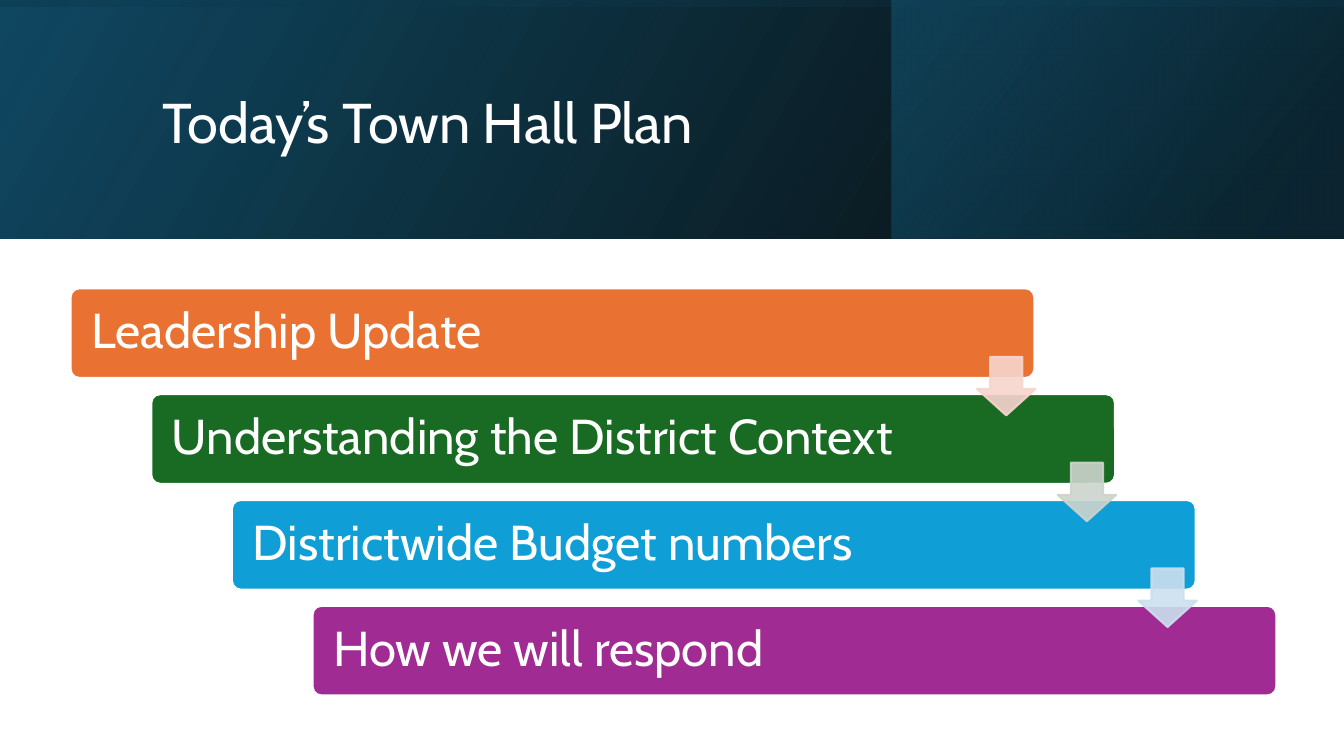
import pptx
import pptx.util
import pptx.dml.color
import pptx.enum.shapes
import pptx.enum.text
import lxml.etree

Inches = pptx.util.Inches
Pt = pptx.util.Pt
RGB = pptx.dml.color.RGBColor.from_string
KIND = pptx.enum.shapes.MSO_SHAPE
MIDDLE = pptx.enum.text.MSO_ANCHOR.MIDDLE
LEFT = pptx.enum.text.PP_ALIGN.LEFT
COLORS = {
    "white": "FFFFFF", "black": "000000", "navy": "104862",
    "deep": "0B3041", "teal": "156082",
    "orange": "E97132", "green": "196B24", "blue": "0F9ED5", "purple": "A02B93",
    "peach": "F7D5CE", "sage": "CCD4CD", "sky": "CCDFEF",
}


def fade(shape, levels):
    for color, level in zip(shape.element.xpath("./p:spPr//a:srgbClr"), levels):
        alpha = lxml.etree.SubElement(color, pptx.oxml.ns.qn("a:alpha"))
        alpha.set("val", str(level * 1000))


def write(frame, text, size):
    frame.word_wrap = True
    frame.vertical_anchor = MIDDLE
    line = frame.paragraphs[0]
    line.alignment = LEFT
    line.line_spacing = 0.9
    run = line.add_run()
    run.text = text
    run.font.name = "Cabin"
    run.font.size = Pt(size)
    run.font.color.rgb = RGB(COLORS["white"])


deck = pptx.Presentation()
deck.slide_width = Inches(13.33)
deck.slide_height = Inches(7.5)
slide = deck.slides.add_slide(deck.slide_layouts[5])
shapes = slide.shapes

bands = [
    ((0, 0, 13.33, 2.37), 0, 30, [(0, "black", 96), (1, "navy", 100)]),
    ((8.84, 0, 4.49, 2.37), 0, 40, [(0.19, "deep", 68), (1, "teal", 48)]),
    ((5.48, -5.48, 2.37, 13.33), 270, 10, [(0.23, "navy", 16), (0.99, "black", 45)]),
]
for box, turn, angle, stops in bands:
    band = shapes.add_shape(KIND.RECTANGLE, *map(Inches, box))
    band.shadow.inherit = False
    band.line.fill.background()
    band.rotation = turn
    band.element.spPr.get_or_add_xfrm().set("flipH", "1")
    band.fill.gradient()
    band.fill.gradient_angle = angle
    for stop, (place, color, level) in zip(band.fill.gradient_stops, stops):
        stop.position = place
        stop.color.rgb = RGB(COLORS[color])
    fade(band, [level for place, color, level in stops])

title = shapes.title
title.left, title.top, title.width, title.height = map(Inches, (1.51, 0.38, 10.63, 1.72))
write(title.text_frame, "Today’s Town Hall Plan", 40)
title.element.getparent().append(title.element)

steps = [
    ("Leadership Update", "orange"),
    ("Understanding the District Context", "green"),
    ("Districtwide Budget numbers", "blue"),
    ("How we will respond", "purple"),
]
for i, (text, color) in enumerate(steps):
    bar = shapes.add_shape(KIND.ROUNDED_RECTANGLE, Inches(0.7 + 0.8 * i),
                           Inches(2.86 + 1.05 * i), Inches(9.56), Inches(0.89))
    bar.adjustments[0] = 0.1
    bar.shadow.inherit = False
    bar.fill.solid()
    bar.fill.fore_color.rgb = RGB(COLORS[color])
    bar.line.color.rgb = RGB(COLORS["white"])
    bar.line.width = Pt(1.5)
    frame = bar.text_frame
    frame.margin_left = frame.margin_right = Inches(0.18)
    frame.margin_top = frame.margin_bottom = Inches(0.15)
    write(frame, text, 35)

for i, color in enumerate(["peach", "sage", "sky"]):
    arrow = shapes.add_shape(KIND.DOWN_ARROW, Inches(9.69 + 0.8 * i),
                             Inches(3.54 + 1.05 * i), Inches(0.58), Inches(0.58))
    arrow.adjustments[0] = 0.55
    arrow.adjustments[1] = 0.45
    arrow.shadow.inherit = False
    arrow.fill.solid()
    arrow.fill.fore_color.rgb = RGB(COLORS[color])
    arrow.line.color.rgb = RGB(COLORS[color])
    arrow.line.width = Pt(1.5)
    fade(arrow, [90, 90])

deck.save("out.pptx")
